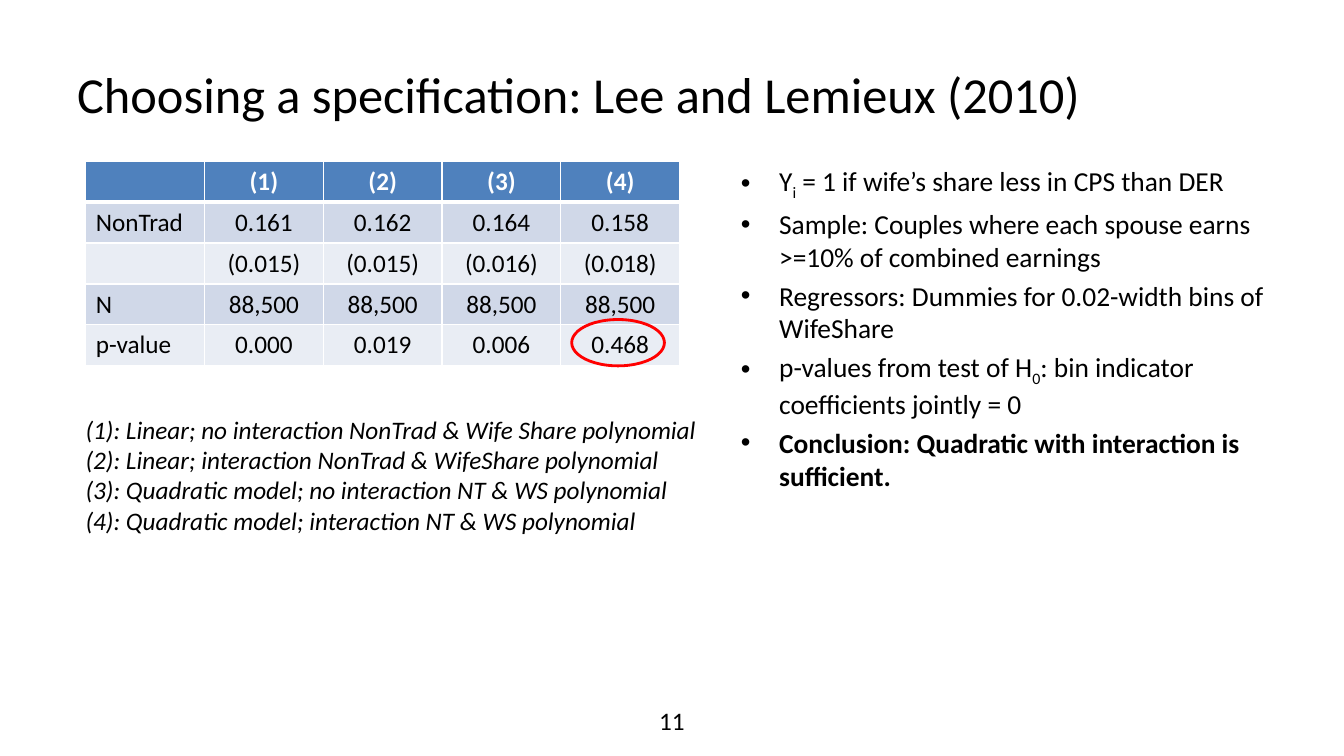
from lxml import etree
from pptx import Presentation
from pptx.dml.color import RGBColor
from pptx.enum.shapes import MSO_SHAPE
from pptx.enum.text import MSO_ANCHOR, PP_ALIGN
from pptx.oxml.ns import qn
from pptx.util import Inches, Pt

BLACK = RGBColor(0x00, 0x00, 0x00)
WHITE = RGBColor(0xFF, 0xFF, 0xFF)
RED = RGBColor(0xFF, 0x00, 0x00)
HEADER_BLUE = RGBColor(0x4F, 0x81, 0xBD)
BAND_DARK = RGBColor(0xD0, 0xD8, 0xE8)
BAND_LIGHT = RGBColor(0xE9, 0xED, 0xF4)

OVAL = MSO_SHAPE.OVAL
TOP, MIDDLE = MSO_ANCHOR.TOP, MSO_ANCHOR.MIDDLE
LEFT, CENTER = PP_ALIGN.LEFT, PP_ALIGN.CENTER

FONT = "Calibri"
BODY_SIZE = 18
BULLET_SIZE = 19.6
BULLET_GAP = 4
BULLET_INDENT = Inches(0.38)
SUBSCRIPT = "-25000"
SLIDE_WIDTH, SLIDE_HEIGHT = Inches(13.33), Inches(7.5)

RESULTS = [
    ["", "(1)", "(2)", "(3)", "(4)"],
    ["NonTrad", "0.161", "0.162", "0.164", "0.158"],
    ["", "(0.015)", "(0.015)", "(0.016)", "(0.018)"],
    ["N", "88,500", "88,500", "88,500", "88,500"],
    ["p-value", "0.000", "0.019", "0.006", "0.468"],
]
MODELS = [
    "(1): Linear; no interaction NonTrad & Wife Share polynomial",
    "(2): Linear; interaction NonTrad & WifeShare polynomial",
    "(3): Quadratic model; no interaction NT & WS polynomial",
    "(4): Quadratic model; interaction NT & WS polynomial",
]
FINDINGS = [
    ["Y", "i", " = 1 if wife’s share less in CPS than DER"],
    ["Sample: Couples where each spouse earns >=10% of combined earnings"],
    ["Regressors: Dummies for 0.02-width bins of WifeShare"],
    ["p-values from test of H", "0", ": bin indicator coefficients jointly = 0"],
]
CONCLUSION = "Conclusion: Quadratic with interaction is sufficient."


def place(left, top, width, height):
    """Turn percentages of the slide into lengths."""
    return (
        int(SLIDE_WIDTH * left / 100),
        int(SLIDE_HEIGHT * top / 100),
        int(SLIDE_WIDTH * width / 100),
        int(SLIDE_HEIGHT * height / 100),
    )


def add_run(para, text, size=BODY_SIZE, color=BLACK, bold=False, italic=False):
    run = para.add_run()
    run.text = text
    run.font.name = FONT
    run.font.size = Pt(size)
    run.font.color.rgb = color
    run.font.bold = bold
    run.font.italic = italic
    return run


def add_box(page, area, anchor=TOP):
    frame = page.shapes.add_textbox(*place(*area)).text_frame
    frame.word_wrap = True
    frame.vertical_anchor = anchor
    return frame


def next_para(frame, index):
    return frame.add_paragraph() if index else frame.paragraphs[0]


def add_lines(page, area, lines, size=BODY_SIZE, align=LEFT, anchor=TOP, italic=False):
    frame = add_box(page, area, anchor)
    for index, line in enumerate(lines):
        para = next_para(frame, index)
        para.alignment = align
        add_run(para, line, size, italic=italic)


def set_bullet(para):
    properties = para._p.get_or_add_pPr()
    properties.set("marL", str(BULLET_INDENT))
    properties.set("indent", str(-BULLET_INDENT))
    etree.SubElement(properties, qn("a:buFont"), typeface="Arial")
    etree.SubElement(properties, qn("a:buChar"), char="•")


def add_bullets(page, area, items, conclusion):
    frame = add_box(page, area)
    for index, pieces in enumerate(items + [[conclusion]]):
        para = next_para(frame, index)
        set_bullet(para)
        if index:
            para.space_before = Pt(BULLET_GAP)
        for position, piece in enumerate(pieces):
            run = add_run(para, piece, BULLET_SIZE, bold=index == len(items))
            if position == 1:
                run.font._element.set("baseline", SUBSCRIPT)


def set_borders(cell, bottom_width):
    properties = cell._tc.get_or_add_tcPr()
    for side, width in (("L", 1), ("R", 1), ("T", 1), ("B", bottom_width)):
        line = etree.SubElement(properties, qn(f"a:ln{side}"), w=str(Pt(width)))
        fill = etree.SubElement(line, qn("a:solidFill"))
        etree.SubElement(fill, qn("a:srgbClr"), val=str(WHITE))


def add_results(page, area, rows):
    table = page.shapes.add_table(len(rows), len(rows[0]), *place(*area)).table
    for row, values in enumerate(rows):
        header = row == 0
        band = BAND_DARK if row % 2 else BAND_LIGHT
        for column, value in enumerate(values):
            cell = table.cell(row, column)
            set_borders(cell, 3 if header else 1)
            cell.fill.solid()
            cell.fill.fore_color.rgb = HEADER_BLUE if header else band
            para = cell.text_frame.paragraphs[0]
            para.alignment = CENTER if column else LEFT
            if value:
                add_run(para, value, color=WHITE if header else BLACK, bold=header)


def add_ring(page, area):
    ring = page.shapes.add_shape(OVAL, *place(*area))
    ring.shadow.inherit = False
    ring.fill.background()
    ring.line.color.rgb = RED
    ring.line.width = Pt(2)


def main():
    deck = Presentation()
    deck.slide_width, deck.slide_height = SLIDE_WIDTH, SLIDE_HEIGHT
    page = deck.slides.add_slide(deck.slide_layouts[6])
    title = "Choosing a specification: Lee and Lemieux (2010)"
    add_lines(page, (5, 4, 90, 16.67), [title], size=36, anchor=MIDDLE)
    add_results(page, (6.38, 21.33, 44.19, 27.07), RESULTS)
    add_lines(page, (38.33, 92.67, 23.33, 5.33), ["11"], align=CENTER)
    add_lines(page, (5.63, 54.13, 51.24, 17.47), MODELS, italic=True)
    add_ring(page, (42.54, 42.27, 6.9, 6.13))
    add_bullets(page, (54.39, 21.07, 44.19, 38.93), FINDINGS, CONCLUSION)
    deck.save("out.pptx")


if __name__ == "__main__":
    main()
